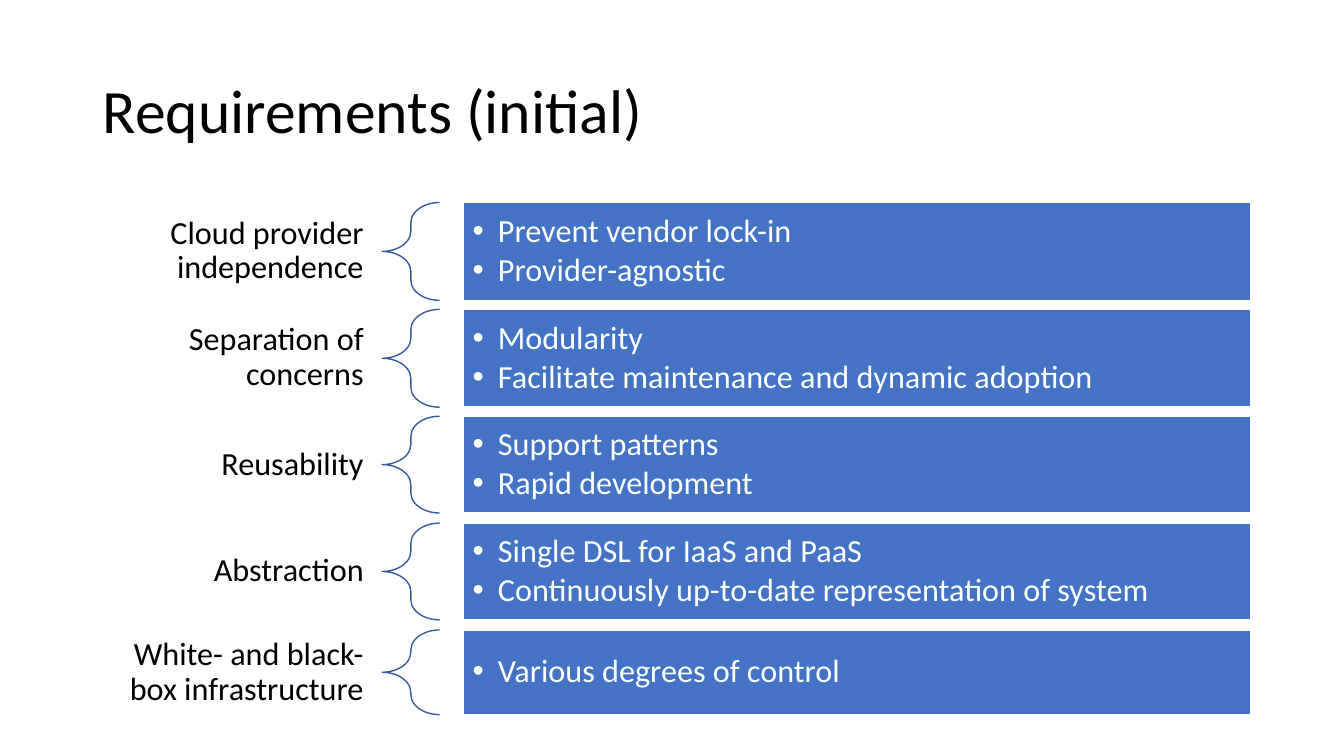
from lxml import etree
from pptx import Presentation
from pptx.dml.color import RGBColor
from pptx.enum.shapes import MSO_SHAPE
from pptx.enum.text import MSO_ANCHOR, MSO_AUTO_SIZE, PP_ALIGN
from pptx.oxml.ns import qn
from pptx.util import Pt

RECT, BRACE = MSO_SHAPE.RECTANGLE, MSO_SHAPE.LEFT_BRACE
MIDDLE, NO_FIT = MSO_ANCHOR.MIDDLE, MSO_AUTO_SIZE.NONE
LEFT, RIGHT = PP_ALIGN.LEFT, PP_ALIGN.RIGHT

BLACK = RGBColor(0x00, 0x00, 0x00)
WHITE = RGBColor(0xFF, 0xFF, 0xFF)
BLUE = RGBColor(0x44, 0x72, 0xC4)
NAVY = RGBColor(0x36, 0x5B, 0x9D)
FONT = "Calibri"

# Content: label, row height in px, bullets
TITLE = "Requirements (initial)"
ROWS = [
    ("Cloud provider independence", 97,
     ["Prevent vendor lock-in", "Provider-agnostic"]),
    ("Separation of concerns", 97,
     ["Modularity", "Facilitate maintenance and dynamic adoption"]),
    ("Reusability", 96,
     ["Support patterns", "Rapid development"]),
    ("Abstraction", 96,
     ["Single DSL for IaaS and PaaS",
      "Continuously up-to-date representation of system"]),
    ("White- and black- box infrastructure", 84,
     ["Various degrees of control"]),
]

# Layout, 100 px to the inch
SCALE = 9144
TOP, PITCH = 201, 106
LABEL_X, LABEL_W = 92, 287
BRACE_X, BRACE_W = 379, 57
BOX_X, BOX_W = 459, 781
INDENT = 25


def px(*nums):
    return [n * SCALE for n in nums]


def setup(frame, side, edge):
    frame.word_wrap = True
    frame.auto_size = NO_FIT
    frame.vertical_anchor = MIDDLE
    frame.margin_left = frame.margin_right = side * SCALE
    frame.margin_top = frame.margin_bottom = edge * SCALE


def write(para, text, size, color, align):
    para.alignment = align
    para.line_spacing = 0.9
    run = para.add_run()
    run.text = text
    run.font.name = FONT
    run.font.size = Pt(size)
    run.font.color.rgb = color


def bullet(para):
    props = para._p.get_or_add_pPr()
    props.set("marL", str(INDENT * SCALE))
    props.set("indent", str(-INDENT * SCALE))
    etree.SubElement(props, qn("a:buFont")).set("typeface", "Arial")
    etree.SubElement(props, qn("a:buChar")).set("char", "•")


def add_form(kind, place, line):
    form = slide.shapes.add_shape(kind, *px(*place))
    form.shadow.inherit = False
    form.line.color.rgb = line
    form.line.width = Pt(1)
    return form


deck = Presentation()
deck.slide_width, deck.slide_height = px(1333, 750)
slide = deck.slides.add_slide(deck.slide_layouts[5])

# Title
head = slide.shapes.title
head.left, head.top, head.width, head.height = px(92, 40, 1150, 145)
setup(head.text_frame, 10, 5)
write(head.text_frame.paragraphs[0], TITLE, 44, BLACK, LEFT)

for i, (label, height, points) in enumerate(ROWS):
    top = TOP + i * PITCH

    # Label, centred on its row
    tall = 84 if " " in label else 50
    note = slide.shapes.add_textbox(
        *px(LABEL_X, top + (height - tall) // 2, LABEL_W, tall))
    setup(note.text_frame, 18, 6)
    write(note.text_frame.paragraphs[0], label, 23, BLACK, RIGHT)

    # Brace
    brace = add_form(BRACE, (BRACE_X, top, BRACE_W, height), NAVY)
    brace.fill.background()
    brace.adjustments[0] = 0.35

    # Box with bullets
    box = add_form(RECT, (BOX_X, top, BOX_W, height), WHITE)
    box.fill.solid()
    box.fill.fore_color.rgb = BLUE
    frame = box.text_frame
    setup(frame, 10, 10)
    for k, point in enumerate(points):
        para = frame.add_paragraph() if k else frame.paragraphs[0]
        write(para, point, 23, WHITE, LEFT)
        para.space_after = Pt(3)
        bullet(para)

deck.save("out.pptx")
